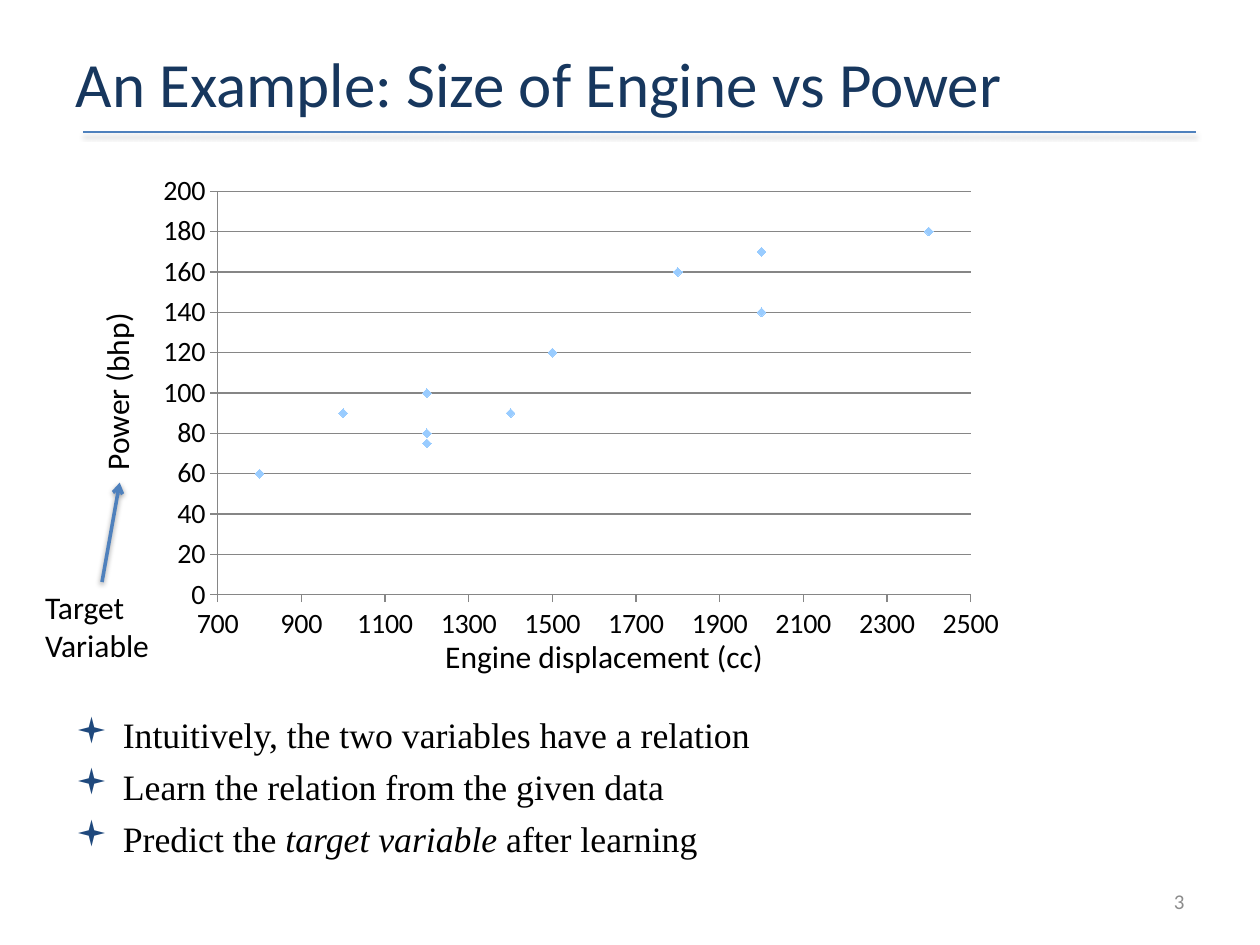
from dataclasses import dataclass

from lxml import etree
from pptx import Presentation
from pptx.chart import data as cd
from pptx.dml.color import RGBColor
from pptx.enum import chart as ch, shapes, text
from pptx.oxml import parse_xml
from pptx.oxml import ns
from pptx.util import Pt


@dataclass(frozen=True)
class Theme:
    heading: str = "Calibri"
    serif: str = "Times New Roman"
    ink: str = "000000"
    title: str = "17375E"
    accent: str = "4F81BD"
    bullet: str = "1F497D"
    marker: str = "99CCFF"
    grid: str = "868686"
    muted: str = "8C8C8C"
    title_size: float = 36
    body_size: float = 20.4
    label_size: float = 18
    tick_size: float = 16
    number_size: float = 12


def rgb(value):
    return RGBColor.from_string(value)


def apply(obj, values):
    for name, value in values.items():
        setattr(obj, name, value)


class Deck:
    def __init__(self, prs, layout, theme):
        self.s = prs.slides.add_slide(prs.slide_layouts[layout])
        self.t = theme

    def place(self, sp, box):
        apply(sp, dict(zip(("left", "top", "width", "height"), map(Pt, box))))

    def font(self, font, size, color=None, name=None, italic=None):
        apply(font, {"size": Pt(size), "name": name or self.t.heading, "italic": italic})
        font.color.rgb = rgb(color or self.t.ink)

    def title(self, box, words):
        sp = self.s.shapes.title
        self.place(sp, box)
        tf = sp.text_frame
        apply(tf, {"text": words, "auto_size": text.MSO_AUTO_SIZE.NONE,
                   "vertical_anchor": text.MSO_ANCHOR.MIDDLE})
        p = tf.paragraphs[0]
        p.alignment = text.PP_ALIGN.LEFT
        self.font(p.runs[0].font, self.t.title_size, self.t.title)

    def bullets(self, box, items):
        sp = self.s.placeholders[1]
        self.place(sp, box)
        tf = sp.text_frame
        tf.auto_size = text.MSO_AUTO_SIZE.NONE
        for i, runs in enumerate(items):
            p = tf.add_paragraph() if i else tf.paragraphs[0]
            p.space_before = Pt(5)
            pPr = p._p.get_or_add_pPr()
            pPr.set("marL", str(Pt(27)))
            pPr.set("indent", str(Pt(-27)))
            color = etree.SubElement(pPr, ns.qn("a:buClr"))
            etree.SubElement(color, ns.qn("a:srgbClr"), val=self.t.bullet)
            etree.SubElement(pPr, ns.qn("a:buFont"), typeface="Wingdings")
            etree.SubElement(pPr, ns.qn("a:buChar"), char="▪")
            for words, italic in runs:
                r = p.add_run()
                r.text = words
                self.font(r.font, self.t.body_size, name=self.t.serif, italic=italic)

    def label(self, box, lines, size, color=None, align=text.PP_ALIGN.LEFT,
              anchor=text.MSO_ANCHOR.TOP, rotation=0):
        sp = self.s.shapes.add_textbox(*map(Pt, box))
        sp.rotation = rotation
        tf = sp.text_frame
        apply(tf, {"word_wrap": True, "vertical_anchor": anchor})
        for i, line in enumerate(lines):
            p = tf.add_paragraph() if i else tf.paragraphs[0]
            p.alignment = align
            r = p.add_run()
            r.text = line
            self.font(r.font, size, color)
        return sp

    def line(self, start, end, width, source=None, arrow=False):
        sp = self.s.shapes.add_connector(shapes.MSO_CONNECTOR.STRAIGHT, *map(Pt, start + end))
        if source is not None:
            sp.begin_connect(source, 0)
        sp.line.width = Pt(width)
        sp.line.color.rgb = rgb(self.t.accent)
        if arrow:
            etree.SubElement(sp.line._get_or_add_ln(), ns.qn("a:tailEnd"), type="arrow")
        effects = etree.SubElement(sp._element.spPr, ns.qn("a:effectLst"))
        shadow = etree.SubElement(effects, ns.qn("a:outerShdw"), blurRad=str(Pt(3.1)),
                                  dist=str(Pt(1.6)), dir="5400000", rotWithShape="0")
        color = etree.SubElement(shadow, ns.qn("a:srgbClr"), val="000000")
        etree.SubElement(color, ns.qn("a:alpha"), val="38000")

    def axis(self, axis, low, high, step, grid):
        apply(axis, {"minimum_scale": low, "maximum_scale": high, "major_unit": step,
                     "has_major_gridlines": grid, "has_title": False,
                     "major_tick_mark": ch.XL_TICK_MARK.OUTSIDE,
                     "minor_tick_mark": ch.XL_TICK_MARK.NONE})
        self.font(axis.tick_labels.font, self.t.tick_size)
        formats = [axis.format] + ([axis.major_gridlines.format] if grid else [])
        for fmt in formats:
            fmt.line.color.rgb = rgb(self.t.grid)
            fmt.line.width = Pt(0.75)

    def scatter(self, box, points, x_scale, y_scale, plot_box):
        data = cd.XyChartData()
        series = data.add_series("Series 1")
        for x, y in points:
            series.add_data_point(x, y)
        chart = self.s.shapes.add_chart(ch.XL_CHART_TYPE.XY_SCATTER, *map(Pt, box), data).chart
        apply(chart, {"has_legend": False, "has_title": False})
        self.font(chart.font, self.t.tick_size)
        plot = chart.plots[0]
        plot.vary_by_categories = False
        ser = plot.series[0]
        ser.format.line.fill.background()
        apply(ser.marker, {"style": ch.XL_MARKER_STYLE.DIAMOND, "size": 5})
        ser.marker.format.fill.solid()
        ser.marker.format.fill.fore_color.rgb = rgb(self.t.marker)
        ser.marker.format.line.color.rgb = rgb(self.t.marker)
        self.axis(chart.category_axis, *x_scale, grid=False)
        self.axis(chart.value_axis, *y_scale, grid=True)
        area = chart._chartSpace.chart.plotArea
        for old in area.findall(ns.qn("c:layout")):
            area.remove(old)
        parts = "".join(f'<c:{k} val="{v}"/>' for k, v in zip("xywh", plot_box))
        area.insert(0, parse_xml(
            f'<c:layout {ns.nsdecls("c")}><c:manualLayout><c:layoutTarget val="inner"/>'
            f'<c:xMode val="edge"/><c:yMode val="edge"/>{parts}</c:manualLayout></c:layout>'))


def main():
    prs = Presentation()
    apply(prs, {"slide_width": Pt(720), "slide_height": Pt(540)})
    t = Theme()
    deck = Deck(prs, 1, t)
    center = text.PP_ALIGN.CENTER

    deck.line((47.5, 75.6), (683.3, 75.6), 1)
    deck.title((36, 21.6, 648, 51.1), "An Example: Size of Engine vs Power")
    deck.label((516, 500.5, 168, 28.8), ["3"], t.number_size, t.muted,
               text.PP_ALIGN.RIGHT, text.MSO_ANCHOR.MIDDLE)

    displacement = [800, 1000, 1200, 1200, 1200, 1400, 1500, 1800, 2000, 2000, 2400]
    power = [60, 90, 80, 100, 75, 90, 120, 160, 140, 170, 180]
    deck.scatter((84.2, 94.3, 496.8, 277.9), list(zip(displacement, power)),
                 (700, 2500, 200), (0, 200, 20), (0.081, 0.054, 0.866, 0.83))
    deck.label((226, 360.7, 238.3, 30.2), ["Engine displacement (cc)"], t.label_size, align=center)
    deck.label((-51.8, 208.8, 238.3, 30.2), ["Power (bhp)"], t.label_size,
               align=center, rotation=270)

    deck.bullets((36, 403.9, 648, 78.5), [
        [("Intuitively, the two variables have a relation", False)],
        [("Learn the relation from the given data", False)],
        [("Predict the ", False), ("target variable", True), (" after learning", False)],
    ])
    target = deck.label((18.7, 332.6, 79.2, 51.1), ["Target", "Variable"], t.label_size)
    deck.line((58.3, 332.6), (68.4, 275.8), 2, source=target, arrow=True)

    prs.save("out.pptx")


if __name__ == "__main__":
    main()
